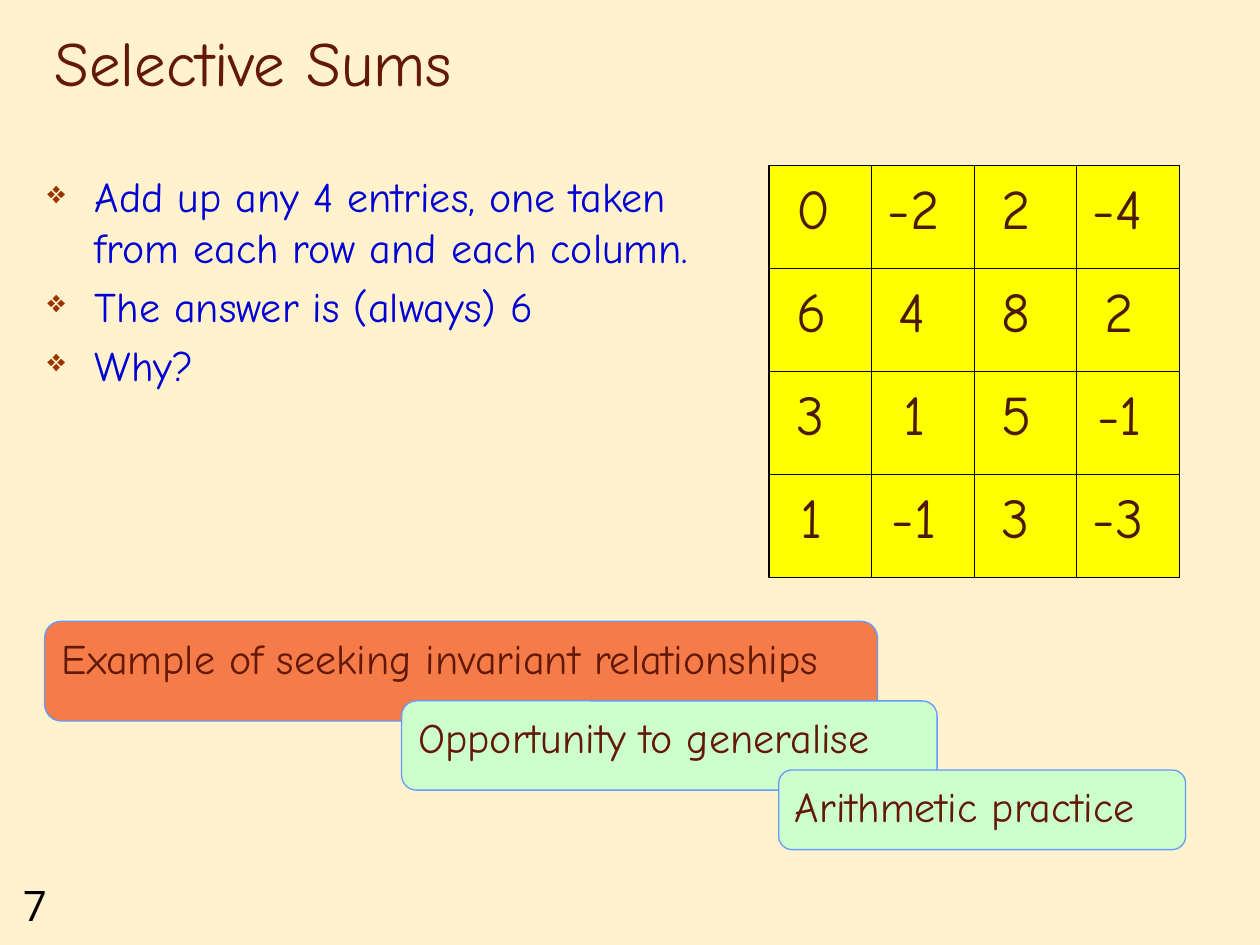
from dataclasses import dataclass

from lxml import etree
from pptx import Presentation
from pptx.dml.color import RGBColor
from pptx.enum import shapes, text
from pptx.oxml import ns
from pptx.util import Pt


@dataclass(frozen=True)
class Theme:
    font: str = "Comic Neue"
    number_font: str = "Open Sans"
    title_size: int = 36
    body_size: int = 24
    entry_size: int = 32
    background: str = "FFF2CC"
    brown: str = "631908"
    blue: str = "0000D4"
    black: str = "000000"
    bullet: str = "993300"
    entry: str = "4C1A00"
    yellow: str = "FFFF00"
    orange: str = "F57B49"
    green: str = "CCFFCC"
    outline: str = "6699FF"


T = Theme()


def rgb(value):
    return RGBColor.from_string(value)


def add_run(p, words, size, color, font=T.font):
    r = p.add_run()
    r.text = words
    r.font.size = Pt(size)
    r.font.name = font
    r.font.color.rgb = rgb(color)


def add_text(s, box, anchor=text.MSO_ANCHOR.TOP):
    tf = s.shapes.add_textbox(*map(Pt, box)).text_frame
    tf.word_wrap = True
    tf.vertical_anchor = anchor
    return tf


def add_box(parent, kind, box, fill, line=None):
    sp = parent.shapes.add_shape(kind, *map(Pt, box))
    sp.shadow.inherit = False
    sp.fill.solid()
    sp.fill.fore_color.rgb = rgb(fill)
    if line:
        sp.line.color.rgb = rgb(line)
        sp.line.width = Pt(0.75)
    else:
        sp.line.fill.background()
    tf = sp.text_frame
    tf.vertical_anchor = text.MSO_ANCHOR.TOP
    tf.paragraphs[0].alignment = text.PP_ALIGN.LEFT
    return sp


def add_title(s, box, words):
    tf = add_text(s, box, text.MSO_ANCHOR.BOTTOM)
    add_run(tf.paragraphs[0], words, T.title_size, T.brown)


def add_slide_number(s, box, number):
    tf = add_text(s, box)
    add_run(tf.paragraphs[0], number, T.body_size, T.black, T.number_font)


def set_bullet(p, char, indent):
    pPr = p._p.get_or_add_pPr()
    pPr.set("marL", str(Pt(indent)))
    pPr.set("indent", str(-Pt(indent)))
    color = etree.SubElement(pPr, ns.qn("a:buClr"))
    etree.SubElement(color, ns.qn("a:srgbClr"), val=T.bullet)
    etree.SubElement(pPr, ns.qn("a:buSzPct"), val="75000")
    etree.SubElement(pPr, ns.qn("a:buChar"), char=char)


def add_bullets(s, box, items):
    tf = add_text(s, box)
    for i, item in enumerate(items):
        p = tf.add_paragraph() if i else tf.paragraphs[0]
        p.space_before = Pt(5)
        set_bullet(p, "❖", 27)
        add_run(p, item, T.body_size, T.blue)


def add_number_grid(s, box, rows):
    """Outlined squares, with a borderless number set up and left of each centre."""
    left, top, width, height = box
    group = s.shapes.add_group_shape()
    step_x, step_y = width / len(rows[0]), height / len(rows)
    cells = [(left + c * step_x, top + r * step_y, value)
             for r, row in enumerate(rows) for c, value in enumerate(row)]
    for x, y, _ in cells:
        add_box(group, shapes.MSO_SHAPE.RECTANGLE, (x, y, step_x, step_y),
                T.yellow, T.black)
    for x, y, value in cells:
        label_w = (46 if value < 0 else 33) - (5 if abs(value) == 1 else 0)
        sp = add_box(group, shapes.MSO_SHAPE.RECTANGLE,
                     (x + 25 - label_w / 2, y + 1, label_w, 46), T.yellow)
        tf = sp.text_frame
        tf.word_wrap = False
        p = tf.paragraphs[0]
        p.space_before = p.space_after = Pt(2)
        add_run(p, str(value), T.entry_size, T.entry)


def add_callout(s, box, words, fill):
    sp = add_box(s, shapes.MSO_SHAPE.ROUNDED_RECTANGLE, box, fill, T.outline)
    add_run(sp.text_frame.paragraphs[0], words, T.body_size, T.brown)


def build_slide(prs):
    s = prs.slides.add_slide(prs.slide_layouts[6])
    s.background.fill.solid()
    s.background.fill.fore_color.rgb = rgb(T.background)

    add_slide_number(s, (6, 499, 54, 36), "7")
    add_title(s, (24, 12, 612, 48), "Selective Sums")
    add_bullets(s, (20, 94, 402.5, 244), [
        "Add up any 4 entries, one taken from each row and each column.",
        "The answer is (always) 6",
        "Why?",
    ])
    add_callout(s, (25.5, 355, 476, 57),
                "Example of seeking invariant relationships", T.orange)
    add_callout(s, (229.5, 400.5, 306, 51), "Opportunity to generalise", T.green)
    add_number_grid(s, (439.5, 94.5, 234.5, 235.5), [
        [0, -2, 2, -4],
        [6, 4, 8, 2],
        [3, 1, 5, -1],
        [1, -1, 3, -3],
    ])
    add_callout(s, (445, 440, 232.5, 45.5), "Arithmetic practice", T.green)


def main():
    prs = Presentation()
    prs.slide_width, prs.slide_height = Pt(720), Pt(540)
    build_slide(prs)
    prs.save("out.pptx")


if __name__ == "__main__":
    main()
